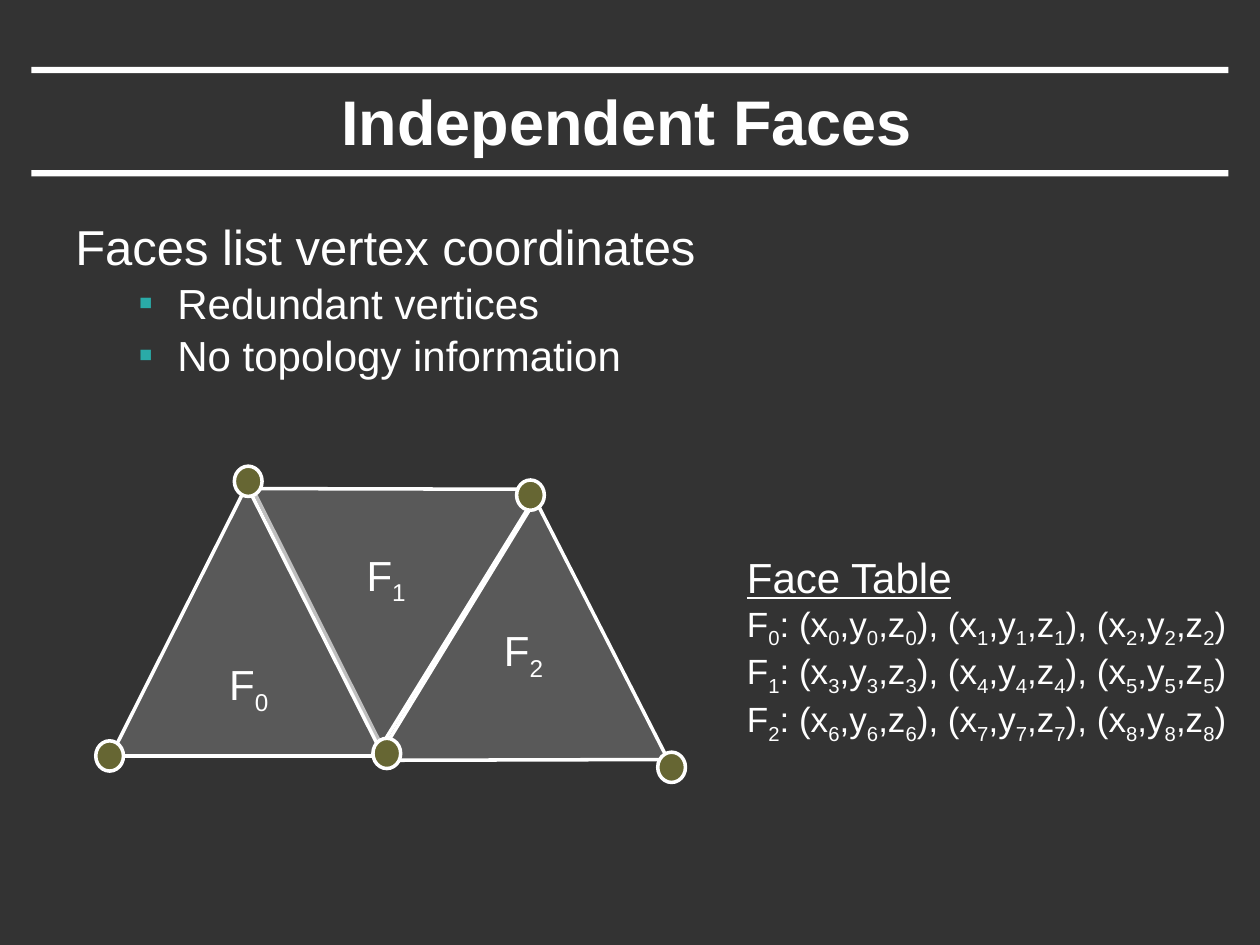
from itertools import groupby

from lxml.etree import SubElement
from pptx import Presentation
from pptx.dml.color import RGBColor
from pptx.enum.shapes import MSO_SHAPE as Kind
from pptx.enum.text import MSO_ANCHOR as Anchor, PP_ALIGN as Align
from pptx.oxml.ns import qn
from pptx.util import Inches, Pt

WHITE, DARK, GRAY, OLIVE, TEAL = "FFFFFF", "333333", "808080", "666633", "2AABA8"
FONT = "Arial"

TITLE = "Independent Faces"
LEAD = "Faces list vertex coordinates"
POINTS = ["Redundant vertices", "No topology information"]
HEAD = "Face Table"
BARS = [0.53, 1.35]
# left, top, width, height, turn in degrees, text inside
FACES = [
    (0.88, 3.82, 2.19, 2.18, 0, "F0"),
    (1.6, 3.41, 2.42, 1.97, 301.7, ""),
    (3.25, 4.53, 2.42, 1.97, 121.4, ""),
]
DOTS = [(2.96, 5.86), (0.76, 5.88), (1.86, 3.7), (4.1, 3.81), (5.22, 5.97)]
TAGS = [("F1", 2.8, 4.31), ("F2", 3.89, 4.91)]


def color(code):
    return RGBColor.from_string(code)


def style(par, size, bold=False, line=False):
    font = par.font
    font.name, font.size = FONT, Pt(size)
    font.bold, font.underline = bold, line
    font.color.rgb = color(WHITE)


def write(par, text, size):
    """Fill a paragraph, setting every digit as a subscript."""
    style(par, size)
    for low, part in groupby(text, str.isdigit):
        run = par.add_run()
        run.text = "".join(part)
        if low:
            run.font._element.set("baseline", "-25000")


def indent(par, left, first, mark=None):
    props = par._p.get_or_add_pPr()
    props.set("marL", str(Inches(left)))
    props.set("indent", str(Inches(first)))
    if mark:
        tint = SubElement(props, qn("a:buClr"))
        SubElement(tint, qn("a:srgbClr"), val=TEAL)
        SubElement(props, qn("a:buFont"), typeface=FONT)
        SubElement(props, qn("a:buChar"), char=mark)


def add_box(home, x, y, w, h, wrap=False):
    frame = home.add_textbox(*map(Inches, (x, y, w, h))).text_frame
    frame.word_wrap = wrap
    return frame


def add_form(home, kind, box, fill, line=None):
    form = home.add_shape(kind, *map(Inches, box))
    form.shadow.inherit = False
    form.fill.solid()
    form.fill.fore_color.rgb = color(fill)
    if line:
        form.line.color.rgb = color(WHITE)
        form.line.width = Pt(line)
    else:
        form.line.fill.background()
    return form


def add_face(home, x, y, w, h, turn, text):
    face = add_form(home, Kind.ISOSCELES_TRIANGLE, (x, y, w, h), GRAY, 2)
    tint = face.fill._xPr.find(qn("a:solidFill"))[0]
    SubElement(tint, qn("a:alpha"), val="50000")
    face.rotation = turn
    if text:
        frame = face.text_frame
        frame.word_wrap = False
        frame.vertical_anchor = Anchor.MIDDLE
        par = frame.paragraphs[0]
        par.alignment = Align.CENTER
        write(par, text, 24)


def add_title(slide):
    title = slide.shapes.title
    title.left, title.top, title.width, title.height = map(
        Inches, (0.74, 0.58, 8.47, 0.75))
    frame = title.text_frame
    frame.text = TITLE
    frame.vertical_anchor = Anchor.MIDDLE
    frame.paragraphs[0].alignment = Align.CENTER
    style(frame.paragraphs[0], 36, bold=True)


def add_body(home):
    frame = add_box(home, 0.5, 1.67, 9, 5.5, wrap=True)
    par = frame.paragraphs[0]
    par.space_before = Pt(2)
    indent(par, 0.38, -0.38)
    write(par, LEAD, 28)
    for text in POINTS:
        par = frame.add_paragraph()
        par.level = 1
        par.space_before = Pt(1)
        indent(par, 0.81, -0.31, "▪")
        write(par, text, 24)


def add_list(home):
    """Write the face table: three numbered vertices to each face."""
    frame = add_box(home, 5.83, 4.33, 4.1, 1.5)
    par = frame.paragraphs[0]
    par.text = HEAD
    style(par, 24, line=True)
    for row in range(3):
        trios = [f"(x{n},y{n},z{n})" for n in range(3 * row, 3 * row + 3)]
        write(frame.add_paragraph(), f"F{row}: " + ", ".join(trios), 20)


def add_mesh(home):
    mesh = home.add_group_shape().shapes
    for face in FACES:
        add_face(mesh, *face)
    for x, y in DOTS:
        add_form(mesh, Kind.OVAL, (x, y, 0.22, 0.24), OLIVE, 2)
    for text, x, y in TAGS:
        par = add_box(mesh, x, y, 0.53, 0.5).paragraphs[0]
        par.alignment = Align.CENTER
        write(par, text, 24)


def main():
    deck = Presentation()
    deck.slide_width, deck.slide_height = Inches(10), Inches(7.5)
    slide = deck.slides.add_slide(deck.slide_layouts[5])
    back = slide.background.fill
    back.solid()
    back.fore_color.rgb = color(DARK)
    home = slide.shapes
    for y in BARS:
        add_form(home, Kind.RECTANGLE, (0.25, y, 9.5, 0.05), WHITE)
    add_title(slide)
    add_body(home)
    add_list(home)
    add_mesh(home)
    deck.save("out.pptx")


if __name__ == "__main__":
    main()
